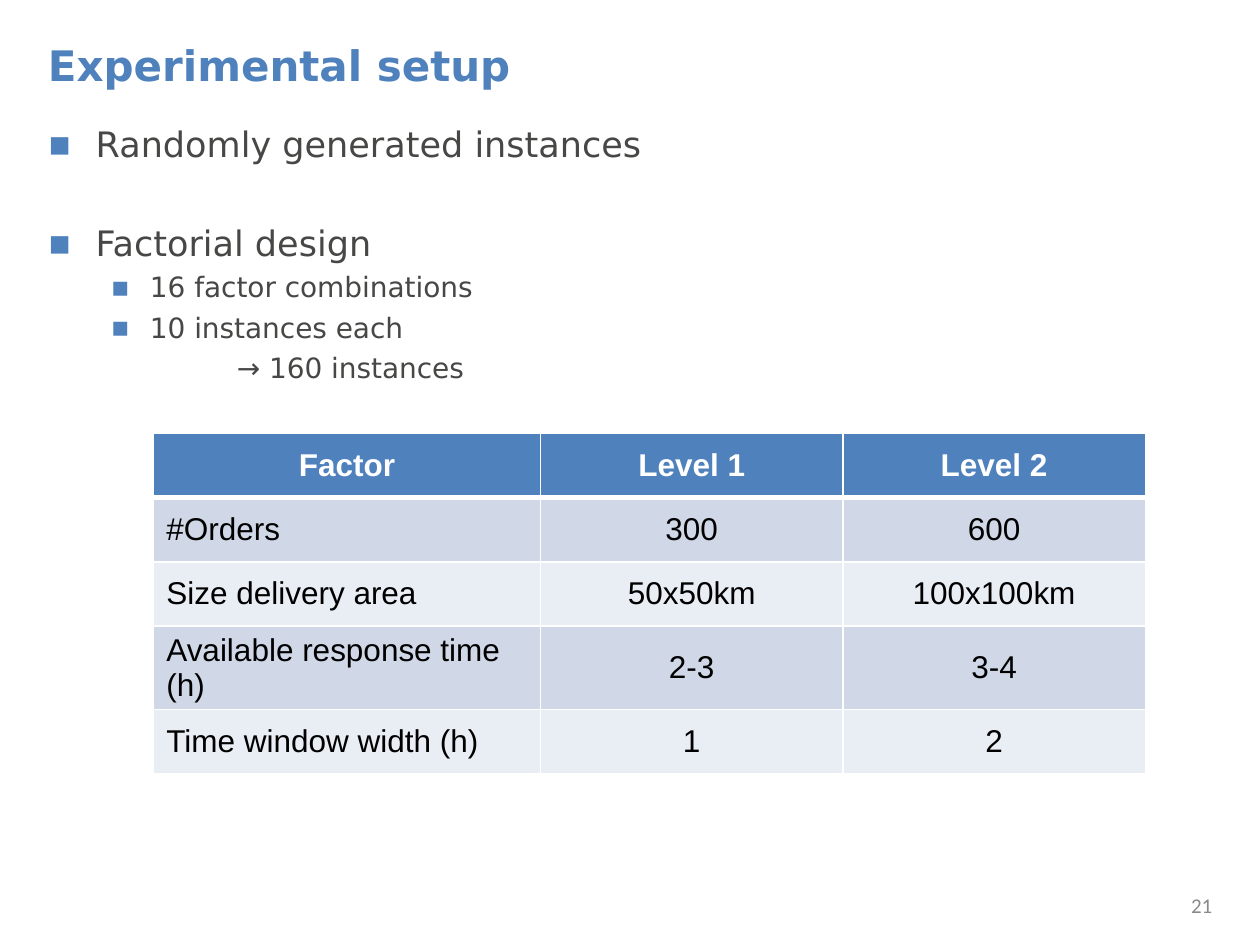
from lxml.etree import SubElement
from pptx import Presentation
from pptx.dml.color import RGBColor
from pptx.enum.text import MSO_ANCHOR as Anchor, MSO_AUTO_SIZE as AutoSize, PP_ALIGN as Align
from pptx.oxml.ns import qn
from pptx.util import Inches, Pt

BLUE, GRAY, WHITE, BLACK = "4F81BD", "474746", "FFFFFF", "000000"
BANDS = ("E9EDF4", "D0D8E8")


def color(value):
    return RGBColor.from_string(value)


def add_solid_fill(parent, value):
    fill = SubElement(parent, qn("a:solidFill"))
    SubElement(fill, qn("a:srgbClr"), val=value)


class SlideBuilder:
    """Holds the text styles and the current slide."""

    styles = {
        "title": {"name": "DejaVu Sans", "size": Pt(24), "bold": True, "color": BLUE},
        "item": {"name": "DejaVu Sans", "size": Pt(20), "color": GRAY},
        "subitem": {"name": "DejaVu Sans", "size": Pt(16), "color": GRAY},
        "header": {"name": "Arial", "size": Pt(18), "bold": True, "color": WHITE},
        "cell": {"name": "Arial", "size": Pt(18), "bold": False, "color": BLACK},
        "number": {"name": "Calibri", "size": Pt(12), "color": "898989"},
    }

    def __init__(self, deck):
        self.page = deck.slides.add_slide(deck.slide_layouts[1])

    def add_text(self, para, text, style, align=Align.LEFT):
        para.alignment = align
        span = para.add_run()
        span.text = text
        for name, value in self.styles[style].items():
            if name == "color":
                span.font.color.rgb = color(value)
            else:
                setattr(span.font, name, value)

    def place(self, box, left, top, width, height, anchor):
        bounds = {"left": left, "top": top, "width": width, "height": height}
        for name, value in bounds.items():
            setattr(box, name, Inches(value))
        frame = box.text_frame
        frame.word_wrap = True
        frame.auto_size = AutoSize.NONE
        frame.vertical_anchor = anchor
        return frame

    def title(self, text, *bounds):
        frame = self.place(self.page.shapes.title, *bounds, Anchor.MIDDLE)
        self.add_text(frame.paragraphs[0], text, "title")

    def bullets(self, items, *bounds):
        frame = self.place(self.page.placeholders[1], *bounds, Anchor.TOP)
        for index, (text, level, margin, hanging, space) in enumerate(items):
            para = frame.add_paragraph() if index else frame.paragraphs[0]
            para.level = level
            para.space_before = Pt(space)
            self.add_text(para, text, "subitem" if level else "item")
            self.mark(para, margin, hanging)

    def mark(self, para, margin, hanging):
        properties = para._p.get_or_add_pPr()
        properties.set("marL", str(Inches(margin)))
        properties.set("indent", str(-Inches(hanging)))
        if not hanging:
            SubElement(properties, qn("a:buNone"))
            return
        bullet_color = SubElement(properties, qn("a:buClr"))
        SubElement(bullet_color, qn("a:srgbClr"), val=BLUE)
        SubElement(properties, qn("a:buFont"), typeface="DejaVu Sans")
        SubElement(properties, qn("a:buChar"), char="▪")

    def borders(self, cell, **widths):
        properties = cell._tc.get_or_add_tcPr()
        for side in "LRTB":
            width = Pt(widths.get(side, 1))
            line = SubElement(properties, qn(f"a:ln{side}"), w=str(width))
            add_solid_fill(line, WHITE)

    def table(self, rows, column_widths, left, top, row_height):
        size = (sum(column_widths), row_height * len(rows))
        frame = self.page.shapes.add_table(
            len(rows), len(column_widths), *map(Inches, (left, top, *size)))
        table = frame.table
        for column, width in zip(table.columns, column_widths):
            column.width = Inches(width)
        for row, texts in enumerate(rows):
            table.rows[row].height = Inches(row_height)
            for column, text in enumerate(texts):
                cell = table.cell(row, column)
                cell.vertical_anchor = Anchor.MIDDLE
                # Thick rule between the header and the first data row
                self.borders(cell, T=3 if row == 1 else 1, B=1 if row else 3)
                cell.fill.solid()
                cell.fill.fore_color.rgb = color(BANDS[row % 2] if row else BLUE)
                align = Align.LEFT if row and not column else Align.CENTER
                self.add_text(cell.text_frame.paragraphs[0], text,
                              "cell" if row else "header", align)

    def page_number(self, text, *bounds):
        box = self.page.shapes.add_textbox(*map(Inches, bounds))
        frame = self.place(box, *bounds, Anchor.MIDDLE)
        self.add_text(frame.paragraphs[0], text, "number", Align.RIGHT)


def main():
    deck = Presentation()
    deck.slide_width, deck.slide_height = Inches(10), Inches(7.5)
    builder = SlideBuilder(deck)

    # Title and list: text, level, margin, hanging indent, space before
    builder.title("Experimental setup", 0.28, 0.21, 9.45, 0.6)
    builder.bullets([
        ("Randomly generated instances", 0, 0.38, 0.38, 0),
        ("Factorial design", 0, 0.38, 0.38, 32.7),
        ("16 factor combinations", 1, 0.81, 0.31, 3.7),
        ("10 instances each", 1, 0.81, 0.31, 3.7),
        ("→ 160 instances", 1, 1.5, 0, 3.7),
    ], 0.28, 0.92, 9.45, 5.51)

    # Factor levels
    builder.table([
        ("Factor", "Level 1", "Level 2"),
        ("#Orders", "300", "600"),
        ("Size delivery area", "50x50km", "100x100km"),
        ("Available response time (h)", "2-3", "3-4"),
        ("Time window width (h)", "1", "2"),
    ], (3.07, 2.4, 2.4), 1.22, 3.44, 0.51)

    # Page number
    builder.page_number("21", 8.9, 6.98, 0.82, 0.4)
    deck.save("out.pptx")


if __name__ == "__main__":
    main()
